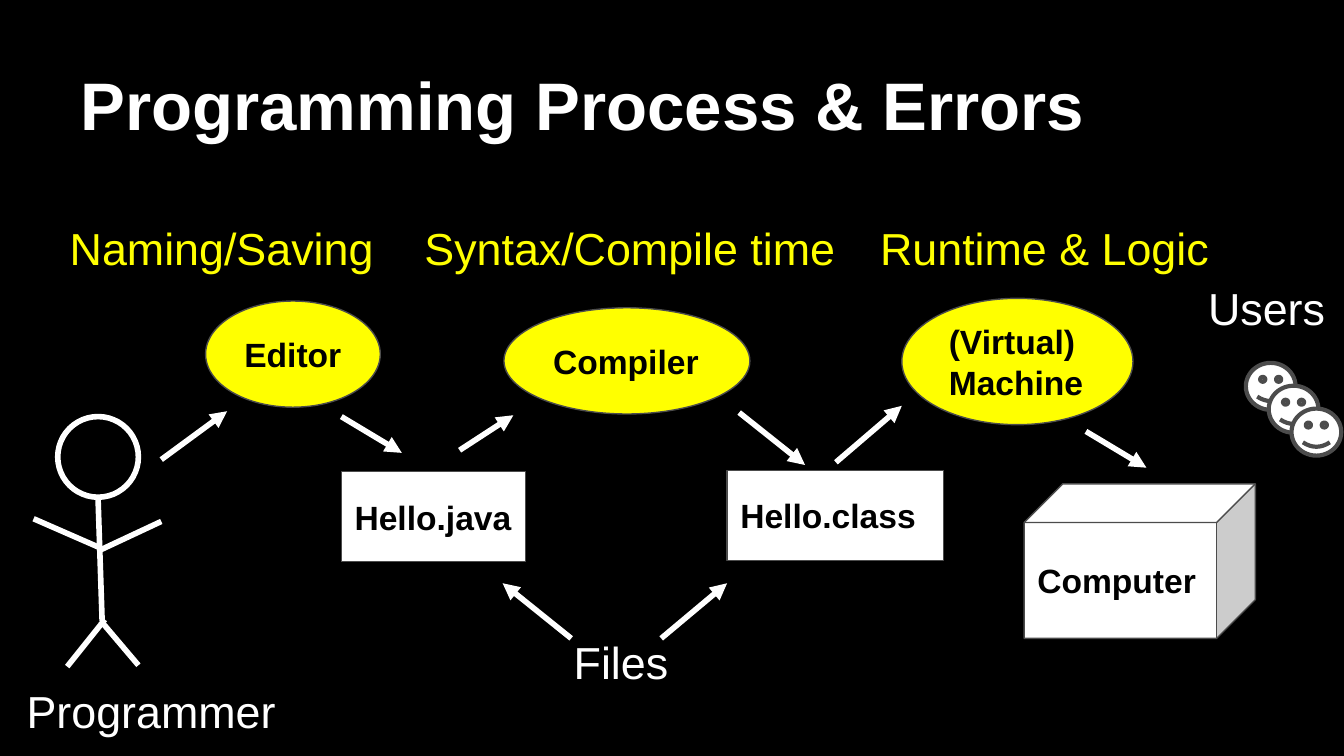
from pptx import Presentation, util as u
from pptx.dml.color import RGBColor
from pptx.enum import shapes as s, text as t
from pptx.oxml.ns import qn
from lxml import etree

BLACK = RGBColor(0x00, 0x00, 0x00)
WHITE = RGBColor(0xFF, 0xFF, 0xFF)
YELLOW = RGBColor(0xFF, 0xFF, 0x00)
GREY = RGBColor(0x4C, 0x4C, 0x4C)

# The slide is a grid of 100 columns by 56.25 rows of square cells
COLUMNS, ROWS = 100, 56.25
CELL = u.Inches(0.1)
KIND = s.MSO_SHAPE


def cells(*counts):
    return [u.Emu(round(count * CELL)) for count in counts]


def within(box, left, top, width, height):
    """Shift a grid rectangle by the corner of its region."""
    return box[0] + left, box[1] + top, width, height


def write(part, words, size=24, color=WHITE, bold=False, anchor=t.MSO_ANCHOR.TOP):
    frame = part.text_frame
    frame.word_wrap = True
    frame.vertical_anchor = anchor
    frame.margin_left = frame.margin_right = CELL
    frame.margin_top = frame.margin_bottom = CELL
    frame.text = words
    for paragraph in frame.paragraphs:
        paragraph.alignment = t.PP_ALIGN.LEFT
        font = paragraph.font
        font.name, font.size, font.bold = "Arial", u.Pt(size), bold
        font.color.rgb = color


def label(slide, box, words, **style):
    write(slide.shapes.add_textbox(*cells(*box)), words, **style)


def outline(slide, kind, box, fill=None, line=GREY, weight=0.75):
    part = slide.shapes.add_shape(kind, *cells(*box))
    part.shadow.inherit = False
    if fill is None:
        part.fill.background()
    else:
        part.fill.solid()
        part.fill.fore_color.rgb = fill
    part.line.color.rgb = line
    part.line.width = u.Pt(weight)
    return part


def node(slide, kind, box, words, fill):
    write(outline(slide, kind, box, fill), words, size=18, color=BLACK,
          bold=True, anchor=t.MSO_ANCHOR.MIDDLE)


def stroke(shapes, box, start, end, arrow=False):
    points = [box[0] + start[0], box[1] + start[1], box[0] + end[0], box[1] + end[1]]
    link = shapes.add_connector(s.MSO_CONNECTOR.STRAIGHT, *cells(*points))
    link.line.color.rgb = WHITE
    link.line.width = u.Pt(3)
    if arrow:
        etree.SubElement(link.line._get_or_add_ln(), qn("a:tailEnd"), type="triangle")
    etree.SubElement(link._element.spPr, qn("a:effectLst"))


def error_headings(slide, box):
    for left, width, words in [
        (0, 25.9, "Naming/Saving"),
        (26.4, 33.3, "Syntax/Compile time"),
        (60.3, 27.8, "Runtime & Logic"),
    ]:
        label(slide, within(box, left, 0, width, box[3]), words, color=YELLOW)


def pipeline(slide, box):
    # Tools, the files between them, and the computer
    for kind, place, words, fill in [
        (KIND.OVAL, (3.3, 0.2, 13, 7.9), "Editor", YELLOW),
        (KIND.RECTANGLE, (13.4, 12.9, 13.7, 6.7), "Hello.java", WHITE),
        (KIND.OVAL, (25.5, 0.7, 18.3, 7.9), "Compiler", YELLOW),
        (KIND.RECTANGLE, (42.1, 12.8, 16.1, 6.7), "Hello.class", WHITE),
        (KIND.OVAL, (55.1, 0, 17.2, 9.4), "(Virtual)\nMachine", YELLOW),
        (KIND.CUBE, (64.2, 13.8, 17.2, 11.5), "Computer", WHITE),
    ]:
        node(slide, kind, within(box, *place), words, fill)
    # Arrows from one step to the next
    for start, end in [
        ((0, 12), (4.9, 8.4)),
        ((13.4, 8.8), (17.9, 11.5)),
        ((22.2, 11.3), (26.2, 8.7)),
        ((43, 8.5), (47.9, 12.4)),
        ((50.2, 12.2), (55.1, 8)),
        ((68.8, 9.9), (73.3, 12.6)),
    ]:
        stroke(slide.shapes, box, start, end, arrow=True)


def files(slide, box):
    label(slide, within(box, 4.3, 2.8, 9.9, 5.8), "Files")
    for start, end in [((5.1, 4.1), (0, 0)), ((11.8, 4.1), (16.7, 0))]:
        stroke(slide.shapes, box, start, end, arrow=True)


def programmer(slide, box):
    # Head, then body, arms and legs
    outline(slide, KIND.FLOWCHART_CONNECTOR, within(box, 3.3, 0, 6, 6),
            line=WHITE, weight=3)
    for start, end in [
        ((6.3, 6.2), (6.6, 15.2)),
        ((1.5, 7.6), (6.3, 9.7)),
        ((6.3, 10), (11, 7.8)),
        ((6.8, 15.1), (4, 18.6)),
        ((6.5, 15.2), (9.3, 18.5)),
    ]:
        stroke(slide.shapes, box, start, end)
    label(slide, within(box, 0, 18.9, 21.4, 5.8), "Programmer")


def users(slide, box):
    label(slide, within(box, 0, 0, 11.7, 5.5), "Users")
    for number in range(3):
        step = 1.7 * number
        face = outline(slide, KIND.SMILEY_FACE,
                       within(box, 3.8 + step, 7.1 + step, 3.7, 3.5),
                       fill=WHITE, weight=2.25)
        face.adjustments[0] = 0.05


def main():
    deck = Presentation()
    deck.slide_width, deck.slide_height = cells(COLUMNS, ROWS)
    slide = deck.slides.add_slide(deck.slide_layouts[6])
    slide.background.fill.solid()
    slide.background.fill.fore_color.rgb = BLACK

    label(slide, (5, 2.3, 90, 9.4), "Programming Process & Errors",
          size=36, bold=True, anchor=t.MSO_ANCHOR.BOTTOM)
    error_headings(slide, (4.2, 15.4, 88.1, 6.7))
    pipeline(slide, (12, 22.2, 81.4, 25.3))
    files(slide, (37.4, 43.4, 16.7, 8.6))
    programmer(slide, (1, 31, 21.4, 24.7))
    users(slide, (88.9, 19.9, 11.7, 13.9))
    deck.save("out.pptx")


if __name__ == "__main__":
    main()
